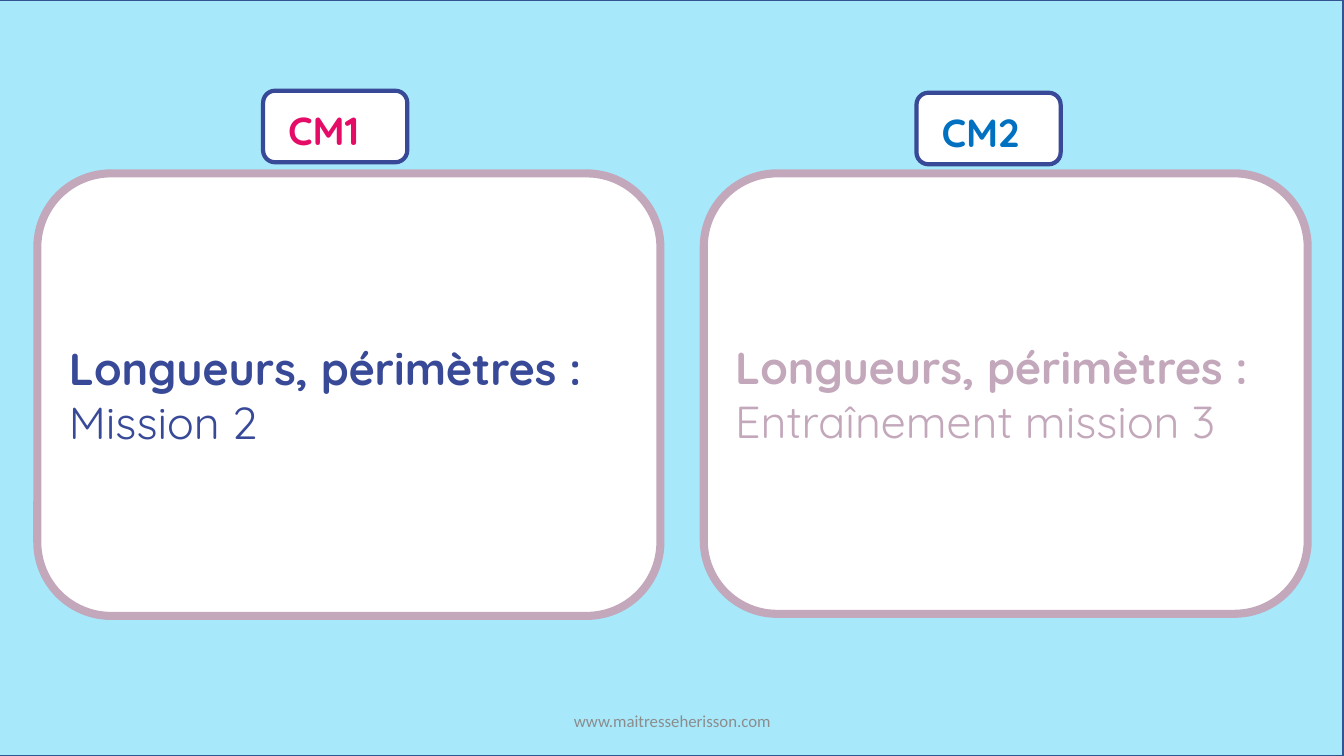
from dataclasses import dataclass

from pptx import Presentation
from pptx.dml.color import RGBColor
from pptx.enum.shapes import MSO_SHAPE
from pptx.enum.text import MSO_ANCHOR, PP_ALIGN
from pptx.util import Inches, Pt

RECT = MSO_SHAPE.RECTANGLE
ROUND = MSO_SHAPE.ROUNDED_RECTANGLE
MIDDLE = MSO_ANCHOR.MIDDLE
LEFT, CENTER = PP_ALIGN.LEFT, PP_ALIGN.CENTER


@dataclass(frozen=True)
class Theme:
    sky: str = "A7E8FB"
    edge: str = "325491"
    white: str = "FFFFFF"
    navy: str = "374997"
    mauve: str = "C3A7BA"
    pink: str = "E50C67"
    blue: str = "0070C0"
    gray: str = "8C8C8C"
    font: str = "Quicksand"
    small: str = "Calibri"
    body: int = 32
    label: int = 28
    note: int = 12


THEME = Theme()


def add_box(slide, kind, box, fill, line, width):
    shape = slide.shapes.add_shape(kind, *map(Inches, box))
    shape.shadow.inherit = False
    shape.fill.solid()
    shape.fill.fore_color.rgb = RGBColor.from_string(fill)
    shape.line.color.rgb = RGBColor.from_string(line)
    shape.line.width = Pt(width)
    return shape


def set_font(font, name, size, color):
    font.name = name
    font.size = Pt(size)
    font.color.rgb = RGBColor.from_string(color)


def add_text(slide, box, text, name, size, color):
    frame = slide.shapes.add_textbox(*map(Inches, box)).text_frame
    frame.word_wrap = True
    para = frame.paragraphs[0]
    para.text = text
    set_font(para.font, name, size, color)
    return frame


def add_tag(parent, left, top, text, color):
    """Level tag: a small framed box with its label, kept as a group."""
    group = parent.shapes.add_group_shape()
    add_box(group, ROUND, (left, top, 1.43, 0.71), THEME.white, THEME.navy, 3)
    frame = add_text(group, (left + 0.15, top + 0.11, 1.1, 0.57), text,
                     THEME.font, THEME.label, color)
    frame.paragraphs[0].font.bold = True


def add_card(slide, box, title, task, color):
    """Large card: bold topic, then the task in plain weight."""
    card = add_box(slide, ROUND, box, THEME.white, THEME.mauve, 5.75)
    frame = card.text_frame
    frame.word_wrap = True
    frame.vertical_anchor = MIDDLE
    para = frame.paragraphs[0]
    para.alignment = LEFT
    for text, bold in ((title + " ", True), (task, False)):
        run = para.add_run()
        run.text = text
        run.font.bold = bold
    for run in para.runs:
        set_font(run.font, THEME.font, THEME.body, color)


def add_footer(slide, box, text):
    frame = add_text(slide, box, text, THEME.small, THEME.note, THEME.gray)
    frame.vertical_anchor = MIDDLE
    frame.paragraphs[0].alignment = CENTER


def main():
    deck = Presentation()
    deck.slide_width, deck.slide_height = Inches(13.33), Inches(7.5)
    slide = deck.slides.add_slide(deck.slide_layouts[6])

    # Backdrop
    add_box(slide, RECT, (-0.01, 0, 13.33, 7.5), THEME.sky, THEME.edge, 1)

    # One card and tag per level
    topic = "Longueurs, périmètres :"
    add_card(slide, (0.37, 1.72, 6.18, 4.39), topic, "Mission 2", THEME.navy)
    add_card(slide, (6.98, 1.72, 5.99, 4.37), topic,
             "Entraînement mission 3", THEME.mauve)
    add_tag(slide, 2.61, 0.9, "CM1", THEME.pink)
    add_tag(slide, 9.09, 0.92, "CM2", THEME.blue)

    # Web address
    add_footer(slide, (4.42, 6.95, 4.5, 0.4), "www.maitresseherisson.com")

    deck.save("out.pptx")


if __name__ == "__main__":
    main()
